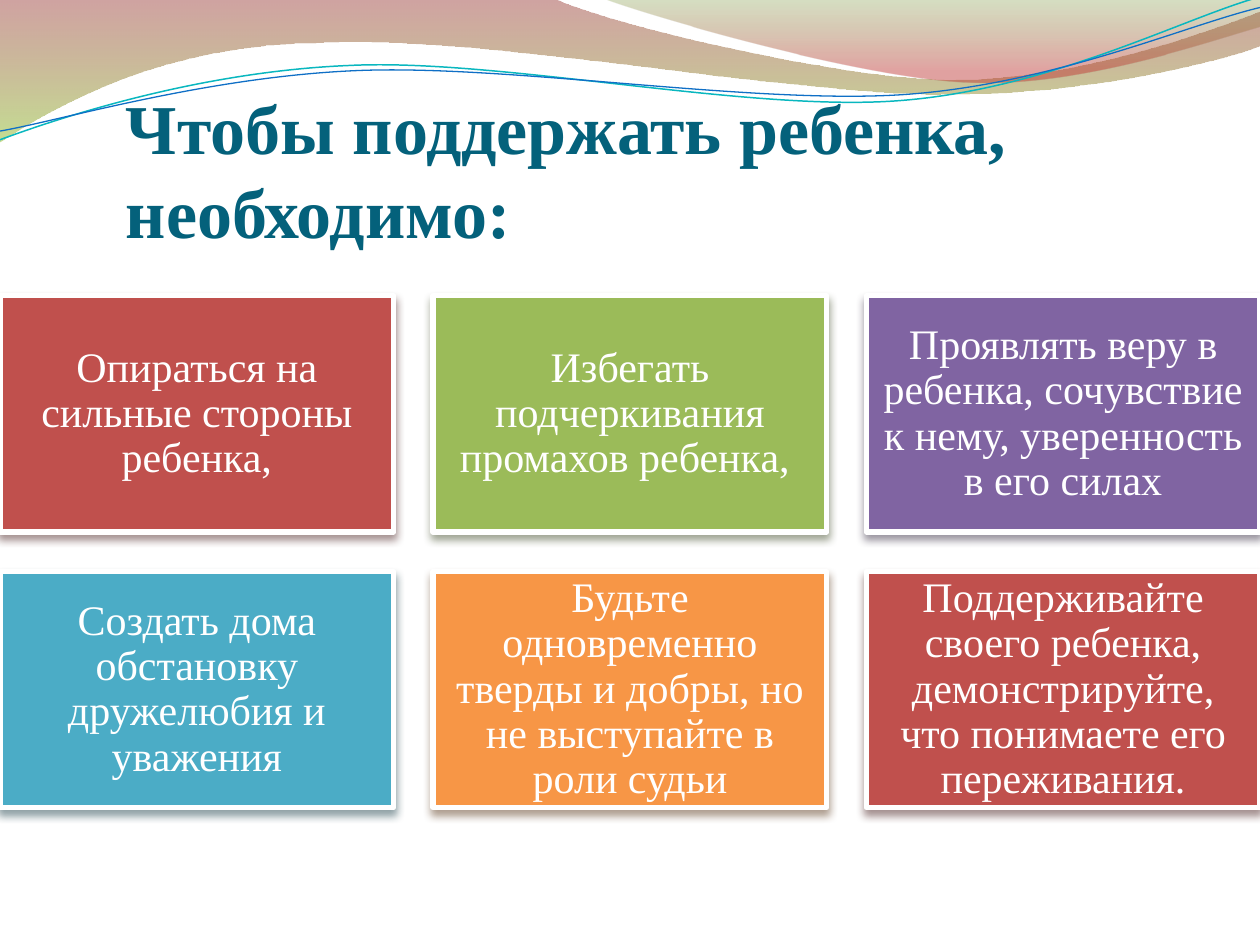
import lxml.etree
import pptx
import pptx.dml.color
import pptx.enum.shapes
import pptx.enum.text
import pptx.oxml.ns
import pptx.util

Pt = pptx.util.Pt
qn = pptx.oxml.ns.qn
ALIGN = pptx.enum.text.PP_ALIGN
ANCHOR = pptx.enum.text.MSO_ANCHOR

COLORS = {
    "white": "FFFFFF", "title": "04617B", "teal": "09B7BF", "blue": "0F6FC6",
    "wine": "973330", "lime": "95C238", "olive": "769537", "rose": "BE3330",
    "red": "C0504D", "green": "9BBB59", "purple": "8064A2", "aqua": "4BACC6", "orange": "F79646",
    "red shadow": "441B1A", "green shadow": "37421E", "purple shadow": "2D2339",
    "aqua shadow": "193D47", "orange shadow": "583517",
}

WIDE_WAVE = [
    (0, 0), (316.8, -0.7),
    (342.7, 12.2, 478.1, 45.4, 545.8, 45.4), (614.2, 45.4, 689.8, 18.7, 720, 6.5),
    (720.7, 25.9), (707.8, 31.7, 626.4, 54.7, 537.1, 54),
    (447.8, 54, 275, 20.2, 185, 24.5), (92.9, 25.2, 33.1, 59.8, -0.7, 81.4), (0, 0),
]
RIGHT_WAVE = [
    (344.9, -0.7), (366.5, 7.9, 491, 44.6, 553.7, 46.8),
    (616.3, 49.7, 691.9, 23, 720, 15.1), (720, 0), (344.9, -0.7),
]
TEAL_CURVE = [
    (-1.4, 62.9), (33.8, 51.7, 114.1, 29.4, 199.8, 29.9),
    (284.9, 29.6, 425.9, 67.3, 512.5, 64.8), (599.1, 62.4, 676.5, 25.7, 720.2, 15.6),
]
BLUE_CURVE = [
    (-1.1, 57.9), (32.9, 53.7, 118.3, 32.5, 204.1, 33),
    (290.6, 33.4, 428.9, 63.1, 515.5, 61.4), (601.4, 59.6, 678.5, 29.4, 721.4, 21.3),
]
CARDS = [
    ("Опираться на сильные стороны ребенка,", "red"),
    ("Избегать подчеркивания промахов ребенка, ", "green"),
    ("Проявлять веру в ребенка, сочувствие к нему, уверенность в его силах", "purple"),
    ("Создать дома обстановку дружелюбия и уважения", "aqua"),
    ("Будьте одновременно тверды и добры, но не выступайте в роли судьи", "orange"),
    ("Поддерживайте своего ребенка, демонстрируйте, что понимаете его переживания.", "red"),
]


def rgb(name):
    return pptx.dml.color.RGBColor.from_string(COLORS[name])


def write_text(shape, text, size, color, font="Times New Roman", bold=False, align=ALIGN.LEFT,
               anchor=ANCHOR.MIDDLE, spacing=1.0, insets=(7.2, 7.2, 7.2, 7.2)):
    frame = shape.text_frame
    frame.word_wrap = True
    frame.vertical_anchor = anchor
    frame.margin_left, frame.margin_top, frame.margin_right, frame.margin_bottom = map(Pt, insets)
    paragraph = frame.paragraphs[0]
    paragraph.alignment = align
    paragraph.line_spacing = spacing
    run = paragraph.add_run()
    run.text = text
    run.font.name = font
    run.font.size = Pt(size)
    run.font.bold = bold
    run.font.color.rgb = rgb(color)


class SlideBuilder:
    """Draws styled elements on the current slide."""

    def __init__(self, slide):
        self.slide = slide

    def freeform(self, segments, closed):
        points = [(Pt(x), Pt(y)) for segment in segments for x, y in zip(segment[::2], segment[1::2])]
        builder = self.slide.shapes.build_freeform(*points[0])
        builder.add_line_segments(points[1:], close=closed)
        shape = builder.convert_to_shape()
        shape.shadow.inherit = False
        lines = iter(list(shape.element.iter(qn("a:lnTo"))))
        for segment in segments[1:]:
            line = next(lines)
            if len(segment) == 6:
                line.tag = qn("a:cubicBezTo")
                for _ in range(2):
                    extra = next(lines)
                    line.append(extra[0])
                    extra.getparent().remove(extra)
        return shape

    def wave(self, segments, stops):
        shape = self.freeform(segments, closed=True)
        shape.line.fill.background()
        shape.fill.gradient()
        shape.fill.gradient_angle = 270
        for stop, (position, color, _) in zip(shape.fill.gradient_stops, stops):
            stop.position = position
            stop.color.rgb = rgb(color)
        for element, (_, _, opacity) in zip(shape.element.iter(qn("a:srgbClr")), stops):
            lxml.etree.SubElement(element, qn("a:alpha"), val=str(opacity * 1000))

    def curve(self, segments, color, width, rotation=357.3):
        shape = self.freeform(segments, closed=False)
        shape.rotation = rotation
        shape.fill.background()
        shape.line.color.rgb = rgb(color)
        shape.line.width = Pt(width)

    def title(self, text, left, top, width, height):
        box = self.slide.shapes.add_textbox(Pt(left), Pt(top), Pt(width), Pt(height))
        write_text(box, text, 40, "title", bold=True, anchor=ANCHOR.BOTTOM, insets=(0, 3.6, 0, 0))

    def card(self, text, color, left, top, width, height):
        shape = self.slide.shapes.add_shape(
            pptx.enum.shapes.MSO_SHAPE.RECTANGLE, Pt(left), Pt(top), Pt(width), Pt(height))
        shape.fill.solid()
        shape.fill.fore_color.rgb = rgb(color)
        shape.line.color.rgb = rgb("white")
        shape.line.width = Pt(3)
        self.shadow(shape, color + " shadow")
        write_text(shape, text, 24, "white", align=ALIGN.CENTER, spacing=0.9)

    def shadow(self, shape, color):
        shape.shadow.inherit = False
        effects = shape.element.spPr.find(qn("a:effectLst"))
        outer = lxml.etree.SubElement(
            effects, qn("a:outerShdw"), blurRad=str(Pt(4.5)), dist=str(Pt(3)),
            dir="5400000", rotWithShape="0")
        shade = lxml.etree.SubElement(outer, qn("a:srgbClr"), val=COLORS[color])
        lxml.etree.SubElement(shade, qn("a:alpha"), val="48000")


def main():
    presentation = pptx.Presentation()
    presentation.slide_width, presentation.slide_height = Pt(720), Pt(540)
    builder = SlideBuilder(presentation.slides.add_slide(presentation.slide_layouts[6]))
    builder.wave(WIDE_WAVE, [(0, "wine", 45), (1, "lime", 55)])
    builder.wave(RIGHT_WAVE, [(0, "olive", 30), (0.8, "rose", 45)])
    builder.curve(TEAL_CURVE, "teal", 0.85)
    builder.curve(BLUE_CURVE, "blue", 0.75)
    builder.title("Чтобы поддержать ребенка, необходимо:", 72, 54.4, 648, 90)
    width, height, gap, columns = 225, 135, 22.5, 3
    for index, (text, color) in enumerate(CARDS):
        row, column = divmod(index, columns)
        builder.card(text, color, column * (width + gap), 169 + row * (height + gap), width, height)
    presentation.save("out.pptx")


if __name__ == "__main__":
    main()
